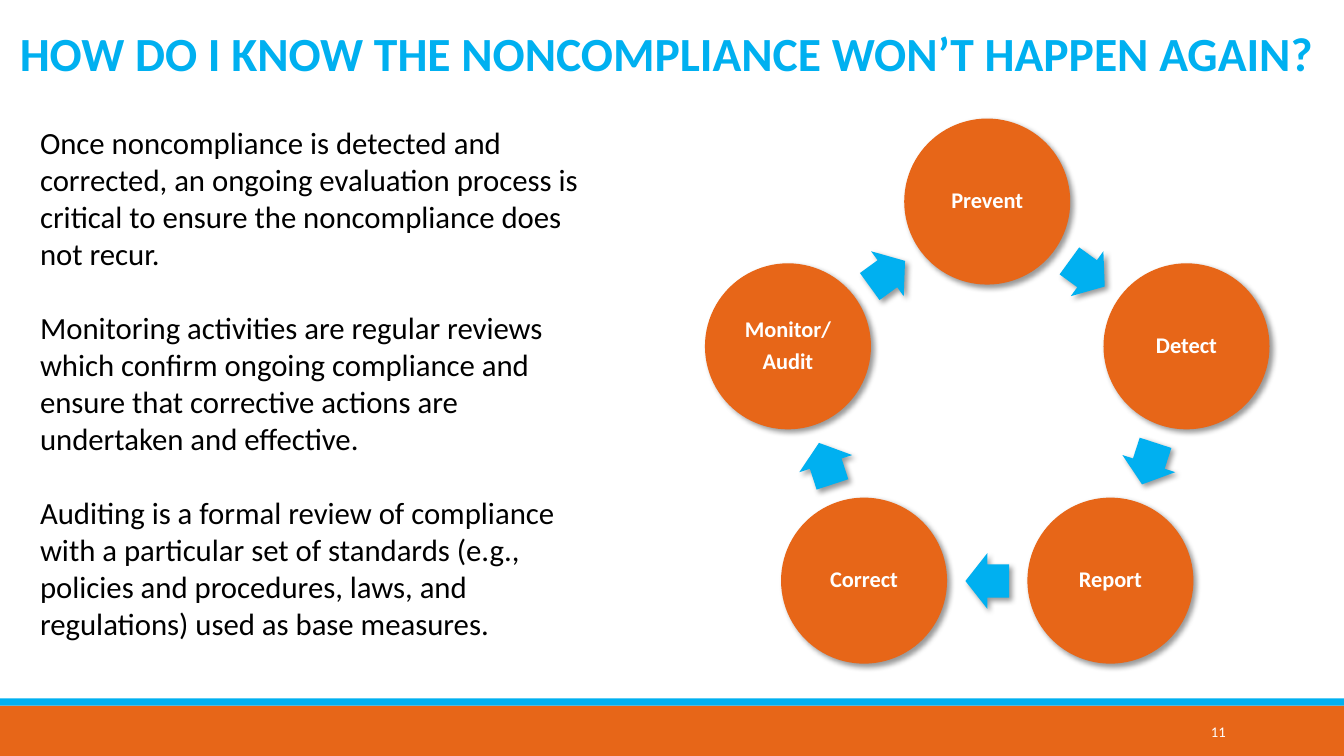
import math

from lxml import etree
from pptx import Presentation
from pptx import util as u
from pptx.dml.color import RGBColor
from pptx.enum import shapes, text
from pptx.oxml import ns

ORANGE = RGBColor(0xE7, 0x66, 0x18)
BLUE = RGBColor(0x00, 0xB0, 0xF0)
BLACK = RGBColor(0x00, 0x00, 0x00)
WHITE = RGBColor(0xFF, 0xFF, 0xFF)

SLIDE_WIDTH, SLIDE_HEIGHT = 33.87, 19.05

TITLE = "HOW DO I KNOW THE NONCOMPLIANCE WON’T HAPPEN AGAIN?"
BODY = [
    "Once noncompliance is detected and corrected, an ongoing evaluation "
    "process is critical to ensure the noncompliance does not recur.",
    "Monitoring activities are regular reviews which confirm ongoing "
    "compliance and ensure that corrective actions are undertaken and effective.",
    "Auditing is a formal review of compliance with a particular set of "
    "standards (e.g., policies and procedures, laws, and regulations) used as "
    "base measures.",
]
STEPS = [["Prevent"], ["Detect"], ["Report"], ["Correct"], ["Monitor/", "Audit"]]

# Cycle layout, in centimetres
CENTER_X, CENTER_Y = 24.88, 10.36
STEP_RADIUS, ARROW_RADIUS = 5.28, 4.28
STEP_SIZE = 4.14
ARROW_WIDTH, ARROW_HEIGHT = 1.1, 1.4


def write(frame, lines, size, color, bold=False, align=text.PP_ALIGN.LEFT,
          anchor=text.MSO_ANCHOR.TOP, gap=0, spacing=None, inset=None):
    """Fill a text frame with one paragraph per line."""
    frame.word_wrap = True
    frame.vertical_anchor = anchor
    if inset is not None:
        frame.margin_left = frame.margin_right = u.Cm(inset)
        frame.margin_top = frame.margin_bottom = u.Cm(inset)
    for index, line in enumerate(lines):
        para = frame.paragraphs[0] if index == 0 else frame.add_paragraph()
        para.alignment = align
        para.line_spacing = spacing
        para.space_before = u.Pt(gap if index else 0)
        span = para.add_run()
        span.text = line
        span.font.name = "Calibri"
        span.font.size = u.Pt(size)
        span.font.bold = bold
        span.font.color.rgb = color


def ring_point(angle, radius):
    """Point on the cycle, with the angle clockwise from the top."""
    turn = math.radians(angle)
    return (CENTER_X + radius * math.sin(turn),
            CENTER_Y - radius * math.cos(turn))


class SlideBuilder:
    def __init__(self, page):
        self.page = page

    def text_box(self, left, top, width, height, lines, **style):
        box = self.page.shapes.add_textbox(
            u.Cm(left), u.Cm(top), u.Cm(width), u.Cm(height))
        write(box.text_frame, lines, **style)

    def shape(self, kind, left, top, width, height, color):
        shape = self.page.shapes.add_shape(
            kind, u.Cm(left), u.Cm(top), u.Cm(width), u.Cm(height))
        shape.shadow.inherit = False
        shape.fill.solid()
        shape.fill.fore_color.rgb = color
        shape.line.fill.background()
        return shape

    def add_shadow(self, shape):
        effects = shape._element.spPr.find(ns.qn("a:effectLst"))
        shadow = etree.SubElement(
            effects, ns.qn("a:outerShdw"), blurRad=str(u.Pt(4)),
            dist=str(u.Pt(3)), dir=str(45 * 60000), rotWithShape="0")
        tint = etree.SubElement(shadow, ns.qn("a:srgbClr"), val="000000")
        etree.SubElement(tint, ns.qn("a:alpha"), val="40000")

    def step(self, angle, lines):
        x, y = ring_point(angle, STEP_RADIUS)
        circle = self.shape(shapes.MSO_SHAPE.OVAL, x - STEP_SIZE / 2,
                            y - STEP_SIZE / 2, STEP_SIZE, STEP_SIZE, ORANGE)
        circle.line.color.rgb = ORANGE
        circle.line.width = u.Pt(1.25)
        self.add_shadow(circle)
        write(circle.text_frame, lines, size=16, color=WHITE, bold=True,
              align=text.PP_ALIGN.CENTER, anchor=text.MSO_ANCHOR.MIDDLE,
              gap=5.6, spacing=0.9, inset=0.05)

    def arrow(self, angle):
        x, y = ring_point(angle, ARROW_RADIUS)
        arrow = self.shape(shapes.MSO_SHAPE.RIGHT_ARROW, x - ARROW_WIDTH / 2,
                           y - ARROW_HEIGHT / 2, ARROW_WIDTH, ARROW_HEIGHT, BLUE)
        arrow.adjustments[0] = 0.6
        arrow.adjustments[1] = 0.5
        arrow.rotation = angle
        self.add_shadow(arrow)


def main():
    deck = Presentation()
    deck.slide_width, deck.slide_height = u.Cm(SLIDE_WIDTH), u.Cm(SLIDE_HEIGHT)
    builder = SlideBuilder(deck.slides.add_slide(deck.slide_layouts[6]))

    # Footer bands
    rectangle = shapes.MSO_SHAPE.RECTANGLE
    builder.shape(rectangle, 0, 17.78, SLIDE_WIDTH, 1.27, ORANGE)
    builder.shape(rectangle, 0, 17.6, SLIDE_WIDTH, 0.18, BLUE)

    # Title and explanation
    builder.text_box(0.25, 0.48, 33.3, 1.7, [TITLE], size=34, color=BLUE, bold=True)
    builder.text_box(0.76, 3, 14.38, 13.41, BODY, size=22, color=BLACK, gap=26.6)

    # Compliance cycle
    sector = 360 / len(STEPS)
    for index, lines in enumerate(STEPS):
        builder.step(index * sector, lines)
        builder.arrow((index + 0.5) * sector)

    # Slide number
    builder.text_box(27.51, 17.93, 3.63, 1.02, ["11"], size=10.5, color=WHITE,
                     align=text.PP_ALIGN.RIGHT, anchor=text.MSO_ANCHOR.MIDDLE)

    deck.save("out.pptx")


if __name__ == "__main__":
    main()
